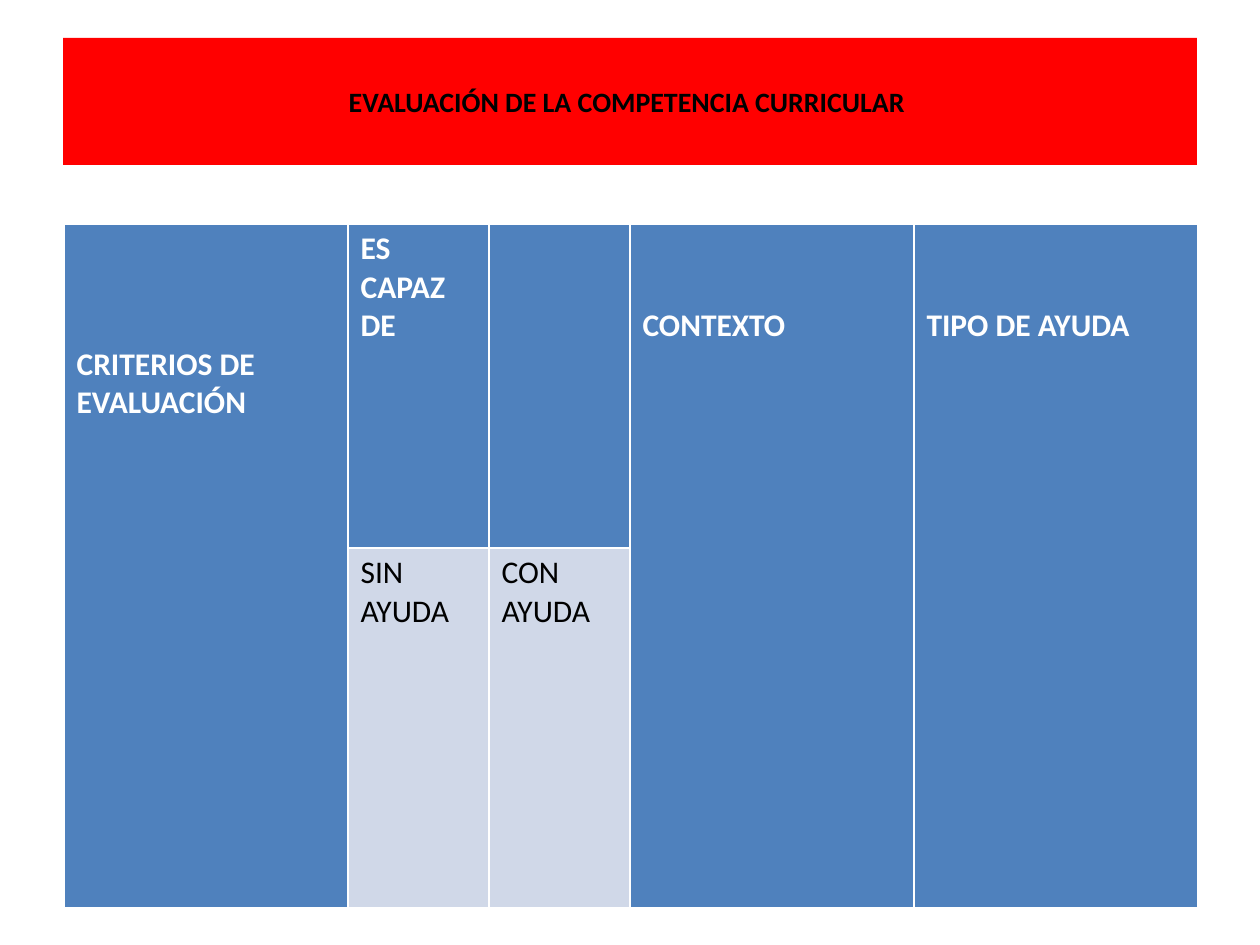
from dataclasses import dataclass

from pptx import Presentation
from pptx import util as u
from pptx.dml.color import RGBColor
from pptx.enum import text

EMU_PER_PX = 914400 / 126


@dataclass(frozen=True)
class Theme:
    font: str = "Calibri"
    title_fill: str = "FF0000"
    header_fill: str = "4F81BD"
    body_fill: str = "D0D8E8"
    light: str = "FFFFFF"
    dark: str = "000000"
    title_size: int = 16
    table_size: int = 18


@dataclass(frozen=True)
class Entry:
    row: int
    column: int
    label: str
    lines_above: int = 0
    full_height: bool = False


THEME = Theme()
SLIDE_SIZE = (1260, 945)
TITLE_BOX = (63, 38, 1134, 127)
TABLE_BOX = (64, 224, 1134, 684)
COLUMN_WIDTHS = (284, 141, 141, 284, 284)
ROW_HEIGHTS = (324, 360)
CELL_MARGIN = 6
LINE_HEIGHT = 38.4
ENTRIES = (
    Entry(0, 0, "CRITERIOS DE EVALUACIÓN", 3, True),
    Entry(0, 1, "ES CAPAZ DE"),
    Entry(0, 2, ""),
    Entry(0, 3, "CONTEXTO", 2, True),
    Entry(0, 4, "TIPO DE AYUDA", 2, True),
    Entry(1, 1, "SIN AYUDA"),
    Entry(1, 2, "CON AYUDA"),
)


def px(length: float) -> u.Emu:
    return u.Emu(round(length * EMU_PER_PX))


def paint(target, color: str) -> None:
    target.fill.solid()
    target.fill.fore_color.rgb = RGBColor.from_string(color)


def format_runs(paragraph, size: int, color: str, bold: bool) -> None:
    for run in paragraph.runs:
        run.font.name = THEME.font
        run.font.size = u.Pt(size)
        run.font.bold = bold
        run.font.color.rgb = RGBColor.from_string(color)


def draw_title(slide) -> None:
    title = slide.shapes.title
    title.left, title.top, title.width, title.height = map(px, TITLE_BOX)
    paint(title, THEME.title_fill)
    title.text_frame.text = "EVALUACIÓN DE LA COMPETENCIA CURRICULAR "
    title.text_frame.vertical_anchor = text.MSO_ANCHOR.MIDDLE
    paragraph = title.text_frame.paragraphs[0]
    paragraph.alignment = text.PP_ALIGN.CENTER
    format_runs(paragraph, THEME.title_size, THEME.dark, True)


def draw_entry(table, entry: Entry) -> None:
    is_header = entry.row == 0
    cell = table.cell(entry.row, entry.column)
    if entry.full_height:
        cell.merge(table.cell(len(ROW_HEIGHTS) - 1, entry.column))
    paint(cell, THEME.header_fill if is_header else THEME.body_fill)
    cell.margin_top = px(CELL_MARGIN + entry.lines_above * LINE_HEIGHT)
    cell.text_frame.text = entry.label
    color = THEME.light if is_header else THEME.dark
    format_runs(cell.text_frame.paragraphs[0], THEME.table_size, color, is_header)


def draw_table(slide) -> None:
    frame = slide.shapes.add_table(
        len(ROW_HEIGHTS), len(COLUMN_WIDTHS), *map(px, TABLE_BOX)
    )
    table = frame.table
    for column, width in zip(table.columns, COLUMN_WIDTHS):
        column.width = px(width)
    for row, height in zip(table.rows, ROW_HEIGHTS):
        row.height = px(height)
    for entry in ENTRIES:
        draw_entry(table, entry)


def main() -> None:
    presentation = Presentation()
    presentation.slide_width, presentation.slide_height = map(px, SLIDE_SIZE)
    slide = presentation.slides.add_slide(presentation.slide_layouts[5])
    draw_title(slide)
    draw_table(slide)
    presentation.save("out.pptx")


if __name__ == "__main__":
    main()
